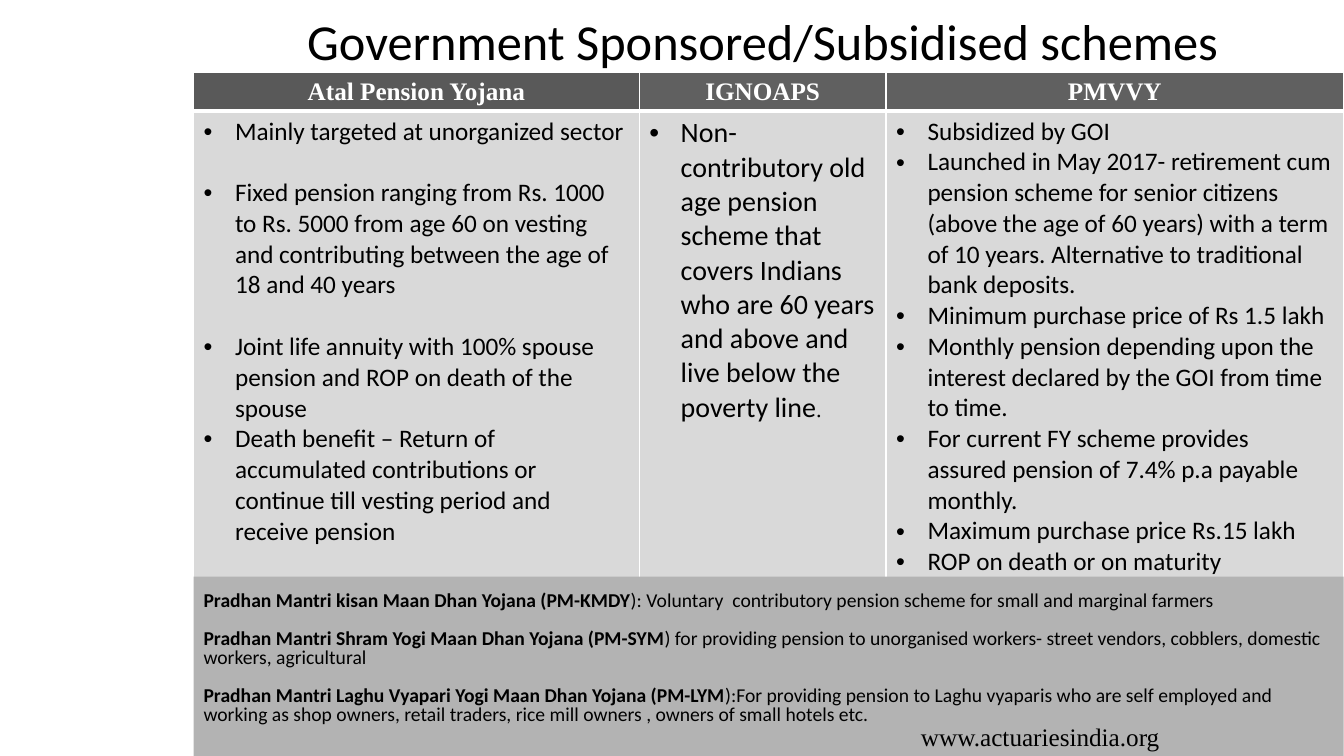
"""Build a slide comparing government sponsored pension schemes."""
import lxml.etree
import pptx
import pptx.dml.color
import pptx.enum.shapes
import pptx.enum.text
import pptx.oxml
import pptx.util
from pptx.util import Cm, Pt

ALIGN = pptx.enum.text.PP_ALIGN
ANCHOR = pptx.enum.text.MSO_ANCHOR
NAMESPACE = "http://schemas.openxmlformats.org/drawingml/2006/main"
LEFT, WIDTH = Cm(4.88), Cm(28.98)
LINE_GAP = 22


def color(value):
    return pptx.dml.color.RGBColor.from_string(value)


def style(font, size, name="Calibri", bold=False, value="000000"):
    font.size = Pt(size)
    font.name = name
    font.bold = bold
    font.color.rgb = color(value)


schemes = [
    ("Atal Pension Yojana", 11.23, "595959", 18, [
        ("Mainly targeted at unorganized sector", 0),
        ("Fixed pension ranging from Rs. 1000 to Rs. 5000 from age 60 on vesting and "
         "contributing between the age of 18 and 40 years", LINE_GAP),
        ("Joint life annuity with 100% spouse pension and ROP on death of the spouse", LINE_GAP),
        ("Death benefit – Return of accumulated contributions or continue till vesting "
         "period and receive pension", 0),
    ]),
    ("IGNOAPS", 6.22, "606060", 20, [
        ("Non-contributory old age pension scheme that covers Indians who are 60 years "
         "and above and live below the poverty line", 0),
    ]),
    ("PMVVY", 11.53, "606060", 18, [
        ("Subsidized by GOI", 0),
        ("Launched in May 2017- retirement cum pension scheme for senior citizens (above "
         "the age of 60 years) with a term of 10 years. Alternative to traditional bank "
         "deposits.", 0),
        ("Minimum purchase price of Rs 1.5 lakh", 0),
        ("Monthly pension depending upon the interest declared by the GOI from time to "
         "time.", 0),
        ("For current FY scheme provides assured pension of 7.4% p.a payable monthly.", 0),
        ("Maximum purchase price Rs.15 lakh", 0),
        ("ROP on death or on maturity", 0),
    ]),
]
other_schemes = [
    ("Pradhan Mantri kisan Maan Dhan Yojana (PM-KMDY",
     "): Voluntary  contributory pension scheme for small and marginal farmers"),
    ("Pradhan Mantri Shram Yogi Maan Dhan Yojana (PM-SYM",
     ") for providing pension to unorganised workers- street vendors, cobblers, domestic "
     "workers, agricultural"),
    ("Pradhan Mantri Laghu Vyapari Yogi Maan Dhan Yojana (PM-LYM",
     "):For providing pension to Laghu vyaparis who are self employed and working as shop "
     "owners, retail traders, rice mill owners , owners of small hotels etc."),
]

presentation = pptx.Presentation()
presentation.slide_width = Cm(33.87)
presentation.slide_height = Cm(19.05)
slide = presentation.slides.add_slide(presentation.slide_layouts[5])

title = slide.shapes.title
title.left, title.top, title.width, title.height = LEFT, Cm(0.2), WIDTH, Cm(1.63)
title.text_frame.text = "Government Sponsored/Subsidised schemes "
title.text_frame.auto_size = pptx.enum.text.MSO_AUTO_SIZE.NONE
title.text_frame.vertical_anchor = ANCHOR.MIDDLE
title.text_frame.paragraphs[0].alignment = ALIGN.CENTER
style(title.text_frame.paragraphs[0].runs[0].font, 36)

table = slide.shapes.add_table(2, 3, LEFT, Cm(1.83), WIDTH, Cm(12.7)).table
table.rows[0].height = Cm(0.97)
table.rows[1].height = Cm(11.73)
for column, (heading, width, fill, size, points) in enumerate(schemes):
    table.columns[column].width = Cm(width)
    header, body = table.cell(0, column), table.cell(1, column)
    header.text_frame.text = heading
    header.text_frame.paragraphs[0].alignment = ALIGN.CENTER
    style(header.text_frame.paragraphs[0].runs[0].font, 18, "Times New Roman", True, "FFFFFF")

    body.text_frame.text = "\n".join(text for text, gap in points)
    for paragraph, (text, gap) in zip(body.text_frame.paragraphs, points):
        properties = paragraph._p.get_or_add_pPr()
        properties.set("marL", str(Cm(0.79)))
        properties.set("indent", str(-Cm(0.79)))
        paragraph.space_before = Pt(gap)
        lxml.etree.SubElement(properties, f"{{{NAMESPACE}}}buFont", typeface="Arial")
        lxml.etree.SubElement(properties, f"{{{NAMESPACE}}}buChar", char="•")
        style(paragraph.runs[0].font, size)

    for cell, cell_fill, top, bottom in ((header, fill, 1, 3), (body, "D9D9D9", 3, 1)):
        cell.fill.solid()
        cell.fill.fore_color.rgb = color(cell_fill)
        borders = (("L", 1), ("R", 1), ("T", top), ("B", bottom))
        for position, (side, weight) in enumerate(borders):
            border = pptx.oxml.parse_xml(
                f'<a:ln{side} xmlns:a="{NAMESPACE}" w="{Pt(weight)}"><a:solidFill>'
                f'<a:srgbClr val="FFFFFF"/></a:solidFill></a:ln{side}>')
            cell._tc.get_or_add_tcPr().insert(position, border)

full_stop = table.cell(1, 1).text_frame.paragraphs[0].add_run()
full_stop.text = "."
style(full_stop.font, 16, "Times New Roman")

panel = slide.shapes.add_shape(
    pptx.enum.shapes.MSO_SHAPE.RECTANGLE, LEFT, Cm(14.53), WIDTH, Cm(4.52))
panel.shadow.inherit = False
panel.fill.solid()
panel.fill.fore_color.rgb = color("B3B3B3")
panel.line.fill.background()
frame = panel.text_frame
frame.word_wrap = True
frame.vertical_anchor = ANCHOR.TOP
frame.margin_left = frame.margin_right = Cm(0.25)
frame.margin_top, frame.margin_bottom = Cm(0.41), 0
frame.text = "\n".join(name for name, description in other_schemes)
for index, (paragraph, scheme) in enumerate(zip(frame.paragraphs, other_schemes)):
    paragraph.alignment = ALIGN.LEFT
    paragraph.line_spacing = 0.8
    paragraph.space_before = Pt(13.7 if index else 0)
    description = paragraph.add_run()
    description.text = scheme[1]
    style(paragraph.runs[0].font, 14, bold=True)
    style(description.font, 14)

website = slide.shapes.add_textbox(Cm(22.96), Cm(18.06), Cm(8.05), Cm(1.02))
website.text_frame.word_wrap = True
website.text_frame.text = "www.actuariesindia.org"
style(website.text_frame.paragraphs[0].runs[0].font, 18, "Times New Roman")

presentation.save("out.pptx")
